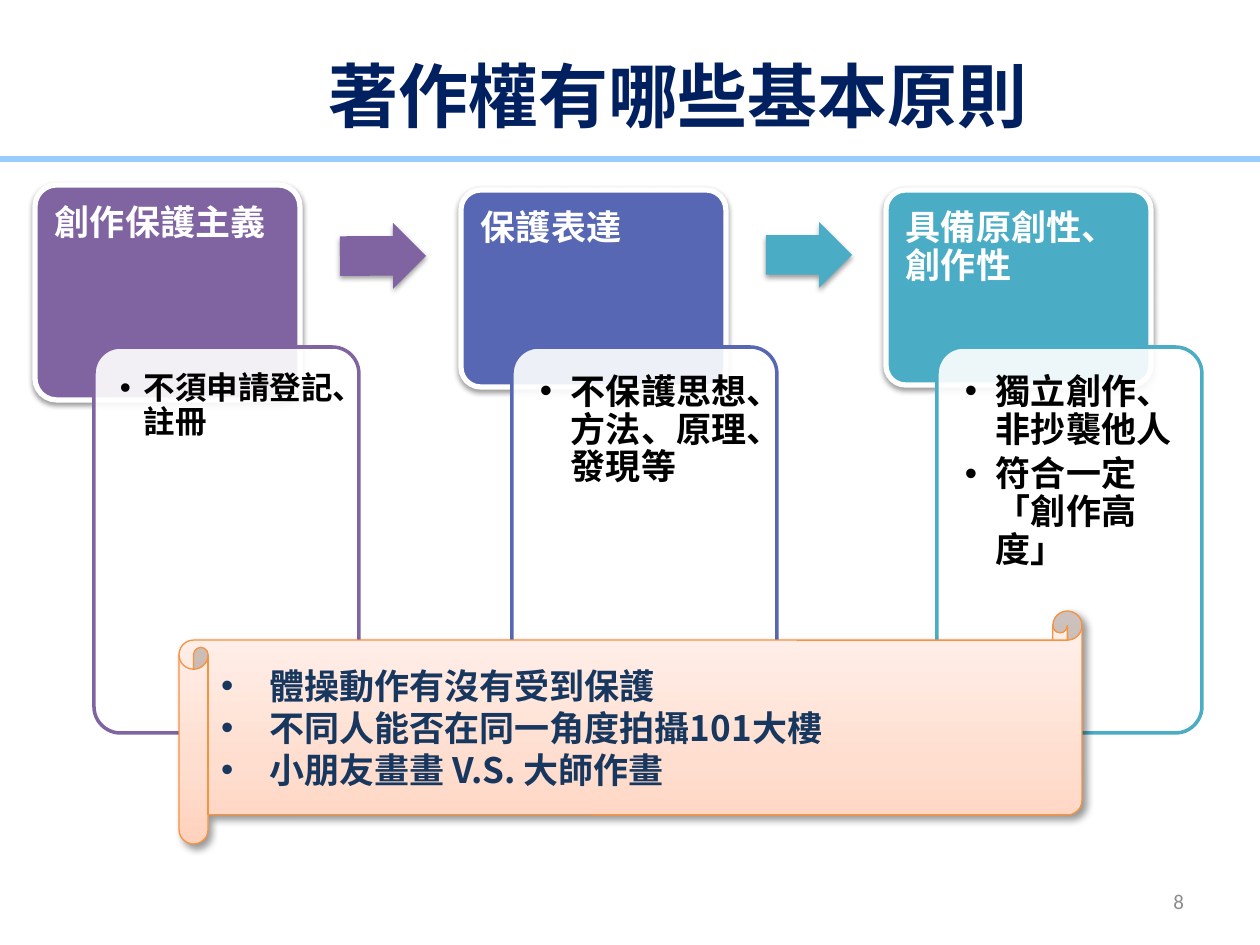
"""Build a slide on the basic principles of copyright."""
import pptx
import pptx.util
import pptx.dml.color
import pptx.enum.shapes
import pptx.enum.text
import pptx.oxml
import pptx.oxml.ns
from lxml import etree

SCALE = 914400 / 126
KIND = pptx.enum.shapes.MSO_SHAPE
ALIGN = pptx.enum.text.PP_ALIGN
ANCHOR = pptx.enum.text.MSO_ANCHOR


class Theme:
    cjk, latin = "Noto Sans CJK SC", "Calibri"
    navy, ink, grey, black, white = "002060", "17375E", "8C8C8C", "000000", "FFFFFF"
    band, edge = "99CCFF", "F69240"
    peach = [(0, "FFD2BD"), (35, "FFDED0"), (100, "FFF2ED")]
    title, text, small, page = 40, 20, 18, 12
    soft, deep = (38, 3.1, 1.6, 90), (40, 4, 3, 45)


TITLE = "著作權有哪些基本原則"
PAGE = "8"
CARDS = [
    dict(head="創作保護主義", items=["不須申請登記、註冊"], color="8064A2",
         box=(35, 185, 265, 215), left=94, size=Theme.small, pad=18, hang=24),
    dict(head="保護表達", items=["不保護思想、方法、原理、發現等"], color="5767B4",
         box=(461, 190, 265, 197), left=512, size=Theme.text, pad=20, hang=31),
    dict(head="具備原創性、創作性", items=["獨立創作、非抄襲他人", "符合一定「創作高度」"],
         color="4BACC6", box=(886, 190, 265, 195), left=937, size=Theme.text, pad=20, hang=31),
]
ARROWS = [(340, 223, 359.8), (766, 222, 0)]
CASES = ["體操動作有沒有受到保護", "不同人能否在同一角度拍攝101大樓", "小朋友畫畫 V.S. 大師作畫"]


def px(n):
    return pptx.util.Emu(round(n * SCALE))


def rgb(code):
    return pptx.dml.color.RGBColor.from_string(code)


def node(parent, tag, **attrs):
    child = etree.SubElement(parent, pptx.oxml.ns.qn("a:" + tag))
    for key, value in attrs.items():
        child.set(key, str(value))
    return child


def shade(shape, alpha, blur, dist, angle):
    effect = shape._element.spPr.find(pptx.oxml.ns.qn("a:effectLst"))
    outer = node(effect, "outerShdw", blurRad=round(blur * 12700), dist=round(dist * 12700),
                 dir=angle * 60000, algn="ctr", rotWithShape=0)
    node(node(outer, "srgbClr", val=Theme.black), "alpha", val=alpha * 1000)


def blend(shape, stops, angle):
    grad = pptx.oxml.parse_xml("<a:gradFill %s/>" % pptx.oxml.ns.nsdecls("a"))
    chain = node(grad, "gsLst")
    for pos, color in stops:
        node(node(chain, "gs", pos=pos * 1000), "srgbClr", val=color)
    node(grad, "lin", ang=angle * 60000, scaled=0)
    shape._element.spPr.find(pptx.oxml.ns.qn("a:prstGeom")).addnext(grad)


def draw(slide, kind, box, fill=None, line=None, width=0, adjust=(), alpha=100):
    shape = slide.shapes.add_shape(kind, *map(px, box))
    shape.shadow.inherit = False
    for i, value in enumerate(adjust):
        shape.adjustments[i] = value
    if fill:
        shape.fill.solid()
        shape.fill.fore_color.rgb = rgb(fill)
    if alpha < 100:
        tint = shape._element.spPr.find(".//" + pptx.oxml.ns.qn("a:srgbClr"))
        node(tint, "alpha", val=alpha * 1000)
    if line:
        shape.line.color.rgb = rgb(line)
        shape.line.width = pptx.util.Pt(width)
    else:
        shape.line.fill.background()
    return shape


def write(shape, lines, size, color, inset=(13, 6, 13, 6), align=ALIGN.LEFT, anchor=ANCHOR.TOP,
          face=Theme.cjk, bold=True, hang=0, level=0, after=0, lead=None):
    frame = shape.text_frame
    frame.word_wrap = True
    frame.vertical_anchor = anchor
    (frame.margin_left, frame.margin_top,
     frame.margin_right, frame.margin_bottom) = map(px, inset)
    frame.text = "\n".join(lines)
    for para in frame.paragraphs:
        para.alignment, para.level = align, level
        para.space_after = pptx.util.Pt(after)
        if lead:
            para.line_spacing = lead
        if hang:
            props = para._p.get_or_add_pPr()
            props.set("marL", str(px(hang)))
            props.set("indent", str(-px(hang)))
            node(props, "buFont", typeface="Arial")
            node(props, "buChar", char="•")
        for run in para.runs:
            font = run.font
            font.name, font.size, font.bold = face, pptx.util.Pt(size), bold
            font.color.rgb = rgb(color)
            latin = font._element.find(pptx.oxml.ns.qn("a:latin"))
            east = node(font._element, "ea", typeface=face)
            latin.addnext(east)


def label(slide, box, *args, **opts):
    write(slide.shapes.add_textbox(*map(px, box)), *args, **opts)


def card(slide, data):
    left, top, wide, high = data["box"]
    back = draw(slide, KIND.ROUNDED_RECTANGLE, data["box"], data["color"], Theme.white, 3, [0.1])
    shade(back, *Theme.soft)
    label(slide, (left, top, wide, high * 2 / 3), [data["head"]], Theme.text, Theme.white,
          inset=(20, 20, 20, 10), after=8, lead=0.9)
    draw(slide, KIND.ROUNDED_RECTANGLE, (data["left"], 347, 265, 386), Theme.white,
         data["color"], 2, [0.1], 90)
    label(slide, (data["left"] + 8, 354, 249, 370), data["items"], data["size"], Theme.black,
          inset=[data["pad"]] * 4, hang=data["hang"], level=1, after=4, lead=0.9)


def main():
    deck = pptx.Presentation()
    deck.slide_width, deck.slide_height = px(1260), px(945)
    slide = deck.slides.add_slide(deck.slide_layouts[6])
    draw(slide, KIND.RECTANGLE, (-5, 156, 1268, 6), Theme.band)
    label(slide, (111, 44, 1134, 101), [TITLE], Theme.title, Theme.navy,
          align=ALIGN.CENTER, anchor=ANCHOR.MIDDLE)
    label(slide, (903, 876, 294, 50), [PAGE], Theme.page, Theme.grey, align=ALIGN.RIGHT,
          anchor=ANCHOR.MIDDLE, face=Theme.latin, bold=False)
    for data in CARDS:
        card(slide, data)
    for (left, top, turn), data in zip(ARROWS, (CARDS[0], CARDS[2])):
        arrow = draw(slide, KIND.RIGHT_ARROW, (left, top, 86, 66), data["color"],
                     adjust=[0.6, 0.5])
        arrow.rotation = turn
        shade(arrow, *Theme.soft)
    scroll = draw(slide, KIND.HORIZONTAL_SCROLL, (179, 611, 903, 233), line=Theme.edge, width=0.75)
    blend(scroll, Theme.peach, 270)
    shade(scroll, *Theme.deep)
    write(scroll, CASES, Theme.text, Theme.ink, anchor=ANCHOR.MIDDLE, hang=48)
    deck.save("out.pptx")


if __name__ == "__main__":
    main()
